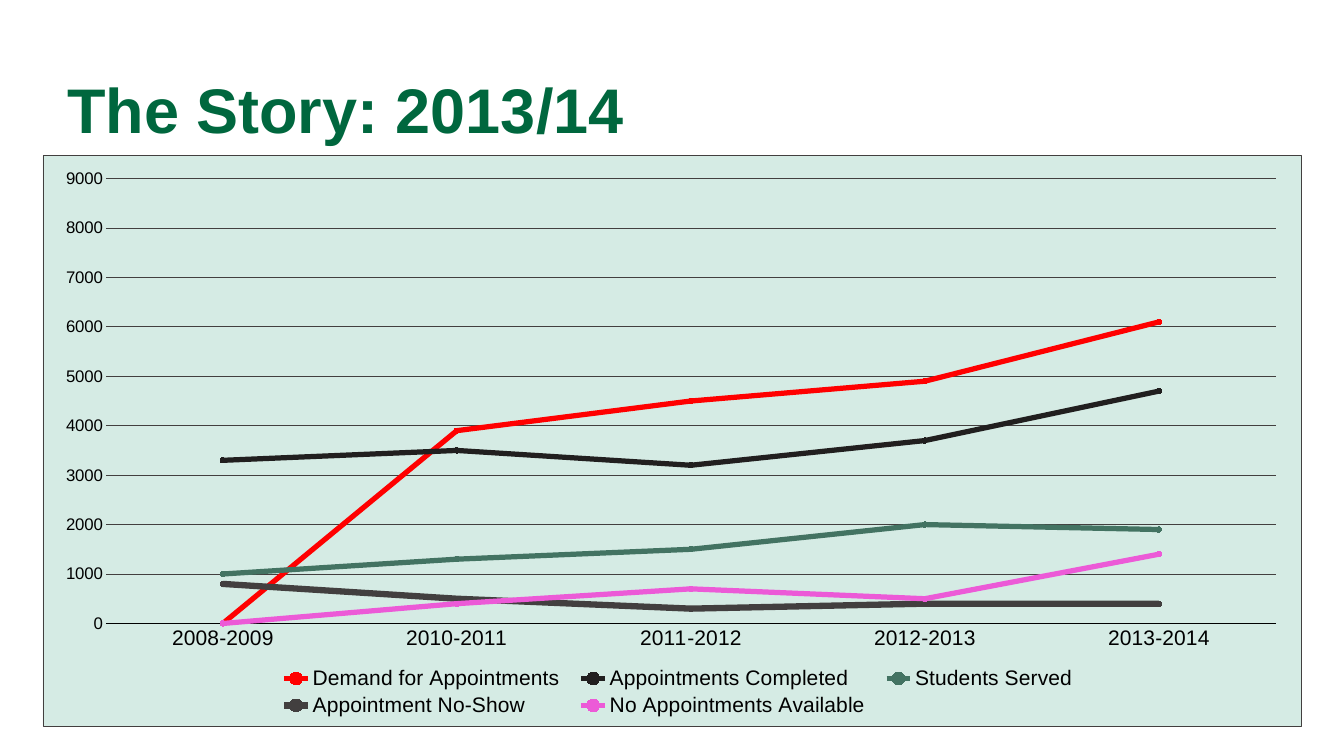
from lxml import etree
from pptx import Presentation
from pptx.chart.data import CategoryChartData
from pptx.dml.color import RGBColor
from pptx.enum import chart as ch, text
from pptx.oxml import parse_xml
from pptx.oxml.ns import nsdecls, qn
from pptx.util import Pt

COLORS = {
    "title": "00673E", "panel": "D5EBE4", "grid": "423F3F", "label": "000000",
    "demand": "FF0000", "completed": "211F1F", "served": "437362",
    "no_show": "423F3F", "unavailable": "EC5AD7",
    "demand_dot": "599A83", "completed_dot": "A6C8BC", "served_dot": "408A70",
    "no_show_dot": "423F3F", "unavailable_dot": "003E25",
}
YEARS = ["2008-2009", "2010-2011", "2011-2012", "2012-2013", "2013-2014"]
# name, colour key, line width, values
SERIES = [
    ("Demand for Appointments", "demand", 5, [None, 3900, 4500, 4900, 6100]),
    ("Appointments Completed", "completed", 5, [3300, 3500, 3200, 3700, 4700]),
    ("Students Served", "served", 5, [1000, 1300, 1500, 2000, 1900]),
    ("Appointment No-Show", "no_show", 6, [800, 500, 300, 400, 400]),
    ("No Appointments Available", "unavailable", 5, [None, 400, 700, 500, 1400]),
]


def color(key):
    return RGBColor.from_string(COLORS[key])


def set_all(target, values):
    for name, value in values.items():
        setattr(target, name, value)


def style_font(font, size, key, bold=False):
    set_all(font, {"name": "Arial", "size": Pt(size), "bold": bold})
    font.color.rgb = color(key)


def style_line(line, key, width):
    line.color.rgb = color(key)
    line.width = Pt(width)


def place_part(parent, index, box, inner=False):
    """Fix a chart part at x, y, w, h, each a fraction of the chart."""
    for old in parent.findall(qn("c:layout")):
        parent.remove(old)
    layout = etree.Element(qn("c:layout"))
    manual = etree.SubElement(layout, qn("c:manualLayout"))
    settings = [("layoutTarget", "inner")] if inner else []
    settings += [("xMode", "edge"), ("yMode", "edge"), *zip("xywh", box)]
    for tag, value in settings:
        etree.SubElement(manual, qn("c:" + tag)).set("val", str(value))
    parent.insert(index, layout)


def fill_panel(chart_space):
    chart_space.find(qn("c:chart")).addnext(parse_xml(
        f'<c:spPr {nsdecls("c", "a")}>'
        f'<a:solidFill><a:srgbClr val="{COLORS["panel"]}"/></a:solidFill>'
        f'<a:ln w="{Pt(0.75)}"><a:solidFill><a:srgbClr val="{COLORS["grid"]}"/>'
        '</a:solidFill></a:ln></c:spPr>'))


def style_axes(chart):
    years, counts = chart.category_axis, chart.value_axis
    for axis, size in ((years, 20), (counts, 16)):
        set_all(axis, {"major_tick_mark": ch.XL_TICK_MARK.NONE,
                       "minor_tick_mark": ch.XL_TICK_MARK.NONE})
        style_font(axis.tick_labels.font, size, "label")
    style_line(years.format.line, "label", 0.75)
    set_all(counts, {"minimum_scale": 0, "maximum_scale": 9000,
                     "major_unit": 1000, "has_major_gridlines": True})
    counts.format.line.fill.background()
    style_line(counts.major_gridlines.format.line, "grid", 0.75)


def style_series(plot):
    plot.vary_by_categories = False
    for series, (_, key, width, _) in zip(plot.series, SERIES):
        series.smooth = False
        style_line(series.format.line, key, width)
        set_all(series.marker, {"style": ch.XL_MARKER_STYLE.CIRCLE, "size": 5})
        dot = series.marker.format
        dot.fill.solid()
        dot.fill.fore_color.rgb = color(key + "_dot")
        style_line(dot.line, key, width)


def add_trend_chart(slide, left, top, width, height):
    data = CategoryChartData()
    data.categories = YEARS
    for name, _, _, values in SERIES:
        data.add_series(name, values)
    chart = slide.shapes.add_chart(
        ch.XL_CHART_TYPE.LINE_MARKERS, Pt(left), Pt(top), Pt(width), Pt(height), data).chart
    set_all(chart, {"has_title": False, "has_legend": True})
    style_font(chart.font, 10, "grid")
    set_all(chart.legend, {"position": ch.XL_LEGEND_POSITION.BOTTOM,
                           "include_in_layout": False})
    style_font(chart.legend.font, 20, "label")
    style_axes(chart)
    style_series(chart.plots[0])

    space = chart.element
    fill_panel(space)
    # Missing years are drawn at zero
    next(space.iter(qn("c:dispBlanksAs"))).set("val", "zero")
    place_part(next(space.iter(qn("c:plotArea"))), 0, (0.05, 0.04, 0.93, 0.78), inner=True)
    place_part(next(space.iter(qn("c:legend"))), 1, (0.18, 0.89, 0.65, 0.1))


def add_title(slide, left, top, width, height):
    frame = slide.shapes.add_textbox(Pt(left), Pt(top), Pt(width), Pt(height)).text_frame
    set_all(frame, {"word_wrap": True, "vertical_anchor": text.MSO_ANCHOR.MIDDLE,
                    "margin_left": 0, "margin_right": 0,
                    "margin_top": 0, "margin_bottom": 0})
    heading = frame.paragraphs[0]
    heading.line_spacing = 0.8
    run = heading.add_run()
    run.text = "The Story: 2013/14"
    style_font(run.font, 60, "title", bold=True)


def main():
    deck = Presentation()
    set_all(deck, {"slide_width": Pt(1280), "slide_height": Pt(720)})
    slide = deck.slides.add_slide(deck.slide_layouts[6])
    add_trend_chart(slide, 40.5, 148, 1199, 544)
    add_title(slide, 64, 52.5, 1152, 115)
    deck.save("out.pptx")


if __name__ == "__main__":
    main()
